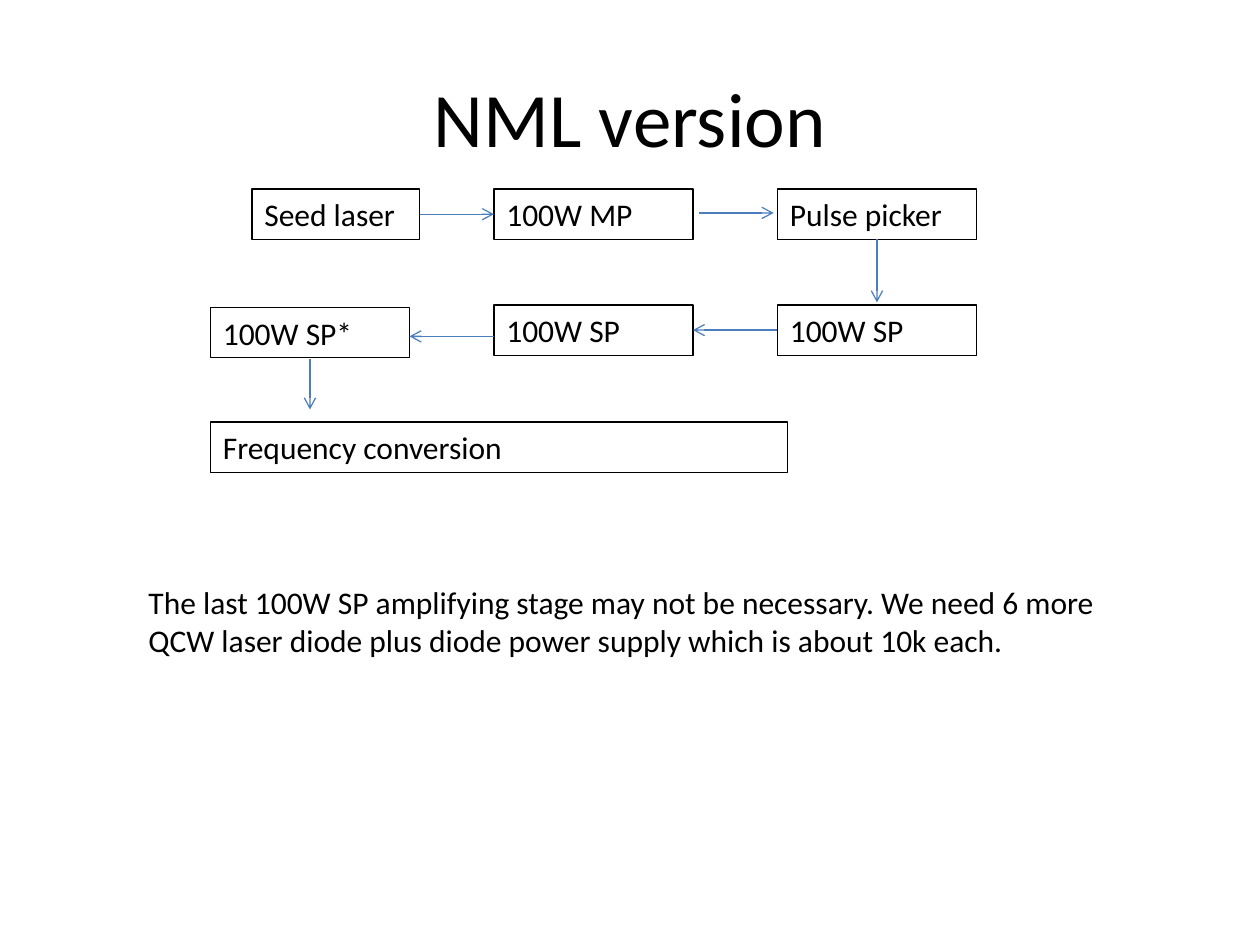
from lxml.etree import SubElement
from pptx import Presentation
from pptx.dml.color import RGBColor
from pptx.enum.shapes import MSO_CONNECTOR, MSO_SHAPE
from pptx.enum.text import MSO_ANCHOR, PP_ALIGN
from pptx.oxml.ns import qn
from pptx.util import Inches, Pt

BLACK = RGBColor(0x00, 0x00, 0x00)
BLUE = RGBColor(0x4B, 0x7E, 0xBC)
FONT = "Calibri"
LINE_WIDTH = Pt(0.75)

COLUMN_LEFT, COLUMN_PITCH = 1.67, 2.25
ROW_TOPS = (1.5, 2.42, 3.35)
BOX_WIDTH, BOX_HEIGHT = 1.58, 0.4

BOXES = (
    ("Seed laser", 0, 0, 0.33, 0, 1.33),
    ("100W MP", 1, 0, 0, 0, BOX_WIDTH),
    ("Pulse picker", 2, 0, 0, 0, BOX_WIDTH),
    ("100W SP", 2, 1, 0, 0, BOX_WIDTH),
    ("100W SP", 1, 1, 0, 0, BOX_WIDTH),
    ("100W SP*", 0, 1, 0, 0.02, BOX_WIDTH),
    ("Frequency conversion", 0, 2, 0, 0, 4.58),
)
ARROWS = (
    (3.33, 1.7, 3.92, 1.7),
    (5.55, 1.69, 6.14, 1.69),
    (6.96, 1.9, 6.96, 2.4),
    (6.17, 2.62, 5.5, 2.62),
    (3.92, 2.67, 3.25, 2.67),
    (2.46, 2.85, 2.46, 3.25),
)
NOTE = (
    "The last 100W SP amplifying stage may not be necessary. We need 6 more "
    "QCW laser diode plus diode power supply which is about 10k each."
)


def write_text(shape, text, size=18, align=PP_ALIGN.LEFT, anchor=MSO_ANCHOR.TOP):
    """Fill a shape with one styled run of text."""
    frame = shape.text_frame
    frame.word_wrap = True
    frame.vertical_anchor = anchor
    paragraph = frame.paragraphs[0]
    paragraph.alignment = align
    run = paragraph.add_run()
    run.text = text
    run.font.name = FONT
    run.font.size = Pt(size)
    run.font.color.rgb = BLACK


def add_text(slide, bounds, text, **style):
    """Add a plain text box."""
    write_text(slide.shapes.add_textbox(*map(Inches, bounds)), text, **style)


def add_stage(slide, text, column, row, shift_x, shift_y, width):
    """Add an outlined stage box at a grid cell."""
    left = COLUMN_LEFT + column * COLUMN_PITCH + shift_x
    top = ROW_TOPS[row] + shift_y
    bounds = map(Inches, (left, top, width, BOX_HEIGHT))
    shape = slide.shapes.add_shape(MSO_SHAPE.RECTANGLE, *bounds)
    shape.shadow.inherit = False
    shape.fill.background()
    shape.line.color.rgb = BLACK
    shape.line.width = LINE_WIDTH
    write_text(shape, text)


def add_arrow(slide, *ends):
    """Add a straight connector with an open arrowhead at its end."""
    arrow = slide.shapes.add_connector(MSO_CONNECTOR.STRAIGHT, *map(Inches, ends))
    arrow.line.color.rgb = BLUE
    arrow.line.width = LINE_WIDTH
    properties = arrow.element.spPr
    SubElement(properties.find(qn("a:ln")), qn("a:tailEnd"), type="arrow")
    SubElement(properties, qn("a:effectLst"))


def main():
    """Build and save the laser chain slide."""
    presentation = Presentation()
    presentation.slide_width = Inches(10)
    presentation.slide_height = Inches(7.5)
    slide = presentation.slides.add_slide(presentation.slide_layouts[6])
    add_text(slide, (0.5, 0.3, 9, 1.25), "NML version", size=44,
             align=PP_ALIGN.CENTER, anchor=MSO_ANCHOR.MIDDLE)
    for box in BOXES:
        add_stage(slide, *box)
    for ends in ARROWS:
        add_arrow(slide, *ends)
    add_text(slide, (1.08, 4.58, 8.17, 0.71), NOTE)
    presentation.save("out.pptx")


if __name__ == "__main__":
    main()
